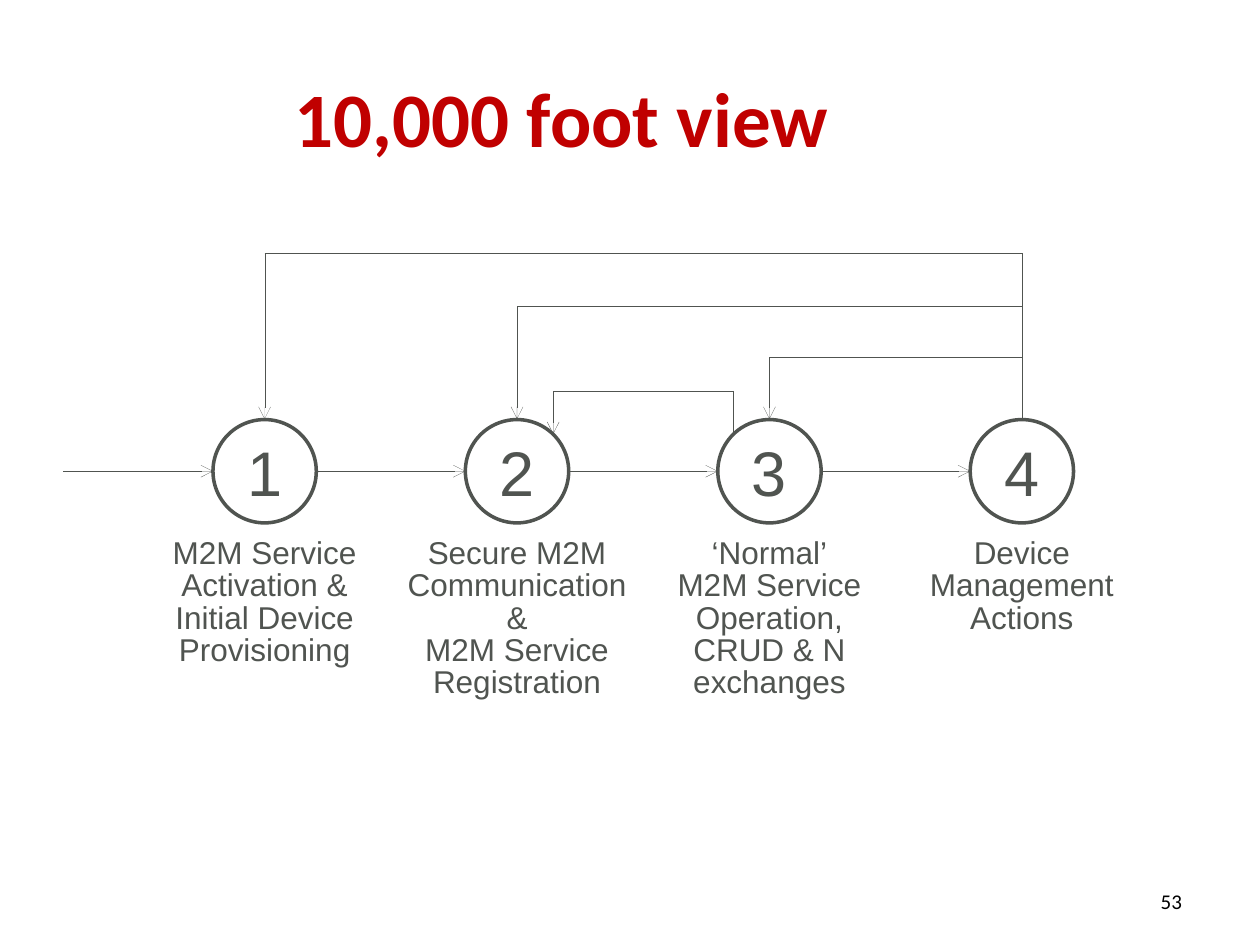
import pptx
import pptx.dml.color
import pptx.enum.dml
import pptx.enum.shapes
import pptx.enum.text
import pptx.oxml
import pptx.oxml.ns
import pptx.util

Inches = pptx.util.Inches
Pt = pptx.util.Pt
Color = pptx.dml.color.RGBColor.from_string
Align = pptx.enum.text.PP_ALIGN
Middle = pptx.enum.text.MSO_ANCHOR.MIDDLE
Kind = pptx.enum.shapes.MSO_CONNECTOR
qn = pptx.oxml.ns.qn

theme = {
    "title": "C00000", "gray": "505450", "white": "FFFFFF", "black": "000000",
    "head": "Calibri", "body": "Arial",
    "title size": 44, "digit size": 36, "label size": 18, "page size": 12,
    "ring": 2, "wire": 0.1,
}


def write(para, text, font, size, color, align=Align.CENTER, bold=False):
    """Add one run per line, with line breaks between the lines."""
    para.alignment = align
    for n, line in enumerate(text.split("\n")):
        if n:
            para.add_line_break()
        run = para.add_run()
        run.text = line
        run.font.name = font
        run.font.size = Pt(theme[size])
        run.font.bold = bold
        run.font.color.rgb = Color(theme[color])


def wire(kind, x1, y1, x2, y2):
    """Add a thin dashed line with an open arrowhead at its end."""
    link = slide.shapes.add_connector(
        kind, Inches(x1), Inches(y1), Inches(x2), Inches(y2))
    link.line.color.rgb = Color(theme["gray"])
    link.line.width = Pt(theme["wire"])
    link.line.dash_style = pptx.enum.dml.MSO_LINE.SQUARE_DOT
    props = link._element.spPr
    tail = pptx.oxml.parse_xml(
        '<a:tailEnd xmlns:a="http://schemas.openxmlformats.org/drawingml/2006/main"'
        ' type="arrow"/>')
    props.find(qn("a:ln")).append(tail)
    props.append(props.makeelement(qn("a:effectLst"), {}))
    return link


deck = pptx.Presentation()
deck.slide_width = Inches(10)
deck.slide_height = Inches(7.5)
slide = deck.slides.add_slide(deck.slide_layouts[5])

# Title
title = slide.shapes.title
title.left, title.top = Inches(0.5), Inches(0.3)
title.width, title.height = Inches(7.92), Inches(1.25)
title.text_frame.vertical_anchor = Middle
write(title.text_frame.paragraphs[0], "10,000 foot view",
      theme["head"], "title size", "title", bold=True)

# Page number
page = slide.shapes.add_textbox(Inches(9.08), Inches(7), Inches(0.4), Inches(0.3))
page.text_frame.word_wrap = False
write(page.text_frame.paragraphs[0], "53",
      theme["head"], "page size", "black", Align.RIGHT)

# Steps: label width and label paragraphs
steps = [
    (2.67, ["M2M Service\nActivation &\nInitial Device Provisioning"]),
    (1.98, ["Secure M2M\nCommunication &\nM2M Service\nRegistration"]),
    (1.81, ["‘Normal’\nM2M Service Operation,", "CRUD & N\nexchanges"]),
    (1.81, ["Device Management Actions"]),
]
first, last = 2.1, 8.11
gap = (last - first) / (len(steps) - 1)
mids = [first + gap * n for n in range(len(steps))]
size, top = 0.82, 3.33
rad = size / 2

for n, (mid, (wide, paras)) in enumerate(zip(mids, steps), 1):
    label = slide.shapes.add_textbox(
        Inches(mid - wide / 2), Inches(4.23), Inches(wide), Inches(1.37))
    frame = label.text_frame
    frame.word_wrap = True
    for k, text in enumerate(paras):
        para = frame.add_paragraph() if k else frame.paragraphs[0]
        para.line_spacing = 0.85
        write(para, text, theme["body"], "label size", "gray")

    ring = slide.shapes.add_shape(
        pptx.enum.shapes.MSO_SHAPE.OVAL,
        Inches(mid - rad), Inches(top), Inches(size), Inches(size))
    ring.shadow.inherit = False
    ring.fill.solid()
    ring.fill.fore_color.rgb = Color(theme["white"])
    ring.line.color.rgb = Color(theme["gray"])
    ring.line.width = Pt(theme["ring"])
    frame = ring.text_frame
    frame.margin_left = frame.margin_right = 0
    frame.margin_top = frame.margin_bottom = 0
    frame.vertical_anchor = Middle
    write(frame.paragraphs[0], str(n), theme["body"], "digit size", "gray")

# Forward arrows, each ending at the next ring
starts = [0.5] + [mid + rad for mid in mids[:-1]]
for start, mid in zip(starts, mids):
    wire(Kind.STRAIGHT, start, top + rad, mid - rad, top + rad)

# Return arrows: start x, end x, y of both ends, y of the crossbar
side = rad * 0.7
loops = [
    (mids[3], mids[2], top, 2.82),
    (mids[2] - side, mids[1] + side, 3.45, 3.09),
    (mids[3], mids[1], top, 2.41),
    (mids[3], mids[0], top, 1.98),
]
thin = 0.01
for right, left, base, bar in loops:
    # A thin upright elbow, turned by 270 degrees about its centre
    mid, half = (left + right) / 2, (right - left) / 2
    link = wire(Kind.ELBOW, mid - thin / 2, base + half,
                mid + thin / 2, base - half)
    props = link._element.spPr
    props.find(qn("a:xfrm")).set("rot", str(270 * 60000))
    bend = props.find(qn("a:prstGeom")).get_or_add_avLst()
    rise = round((base - bar) / thin * 100000)
    bend.append(bend.makeelement(
        qn("a:gd"), {"name": "adj1", "fmla": f"val {rise}"}))

deck.save("out.pptx")
